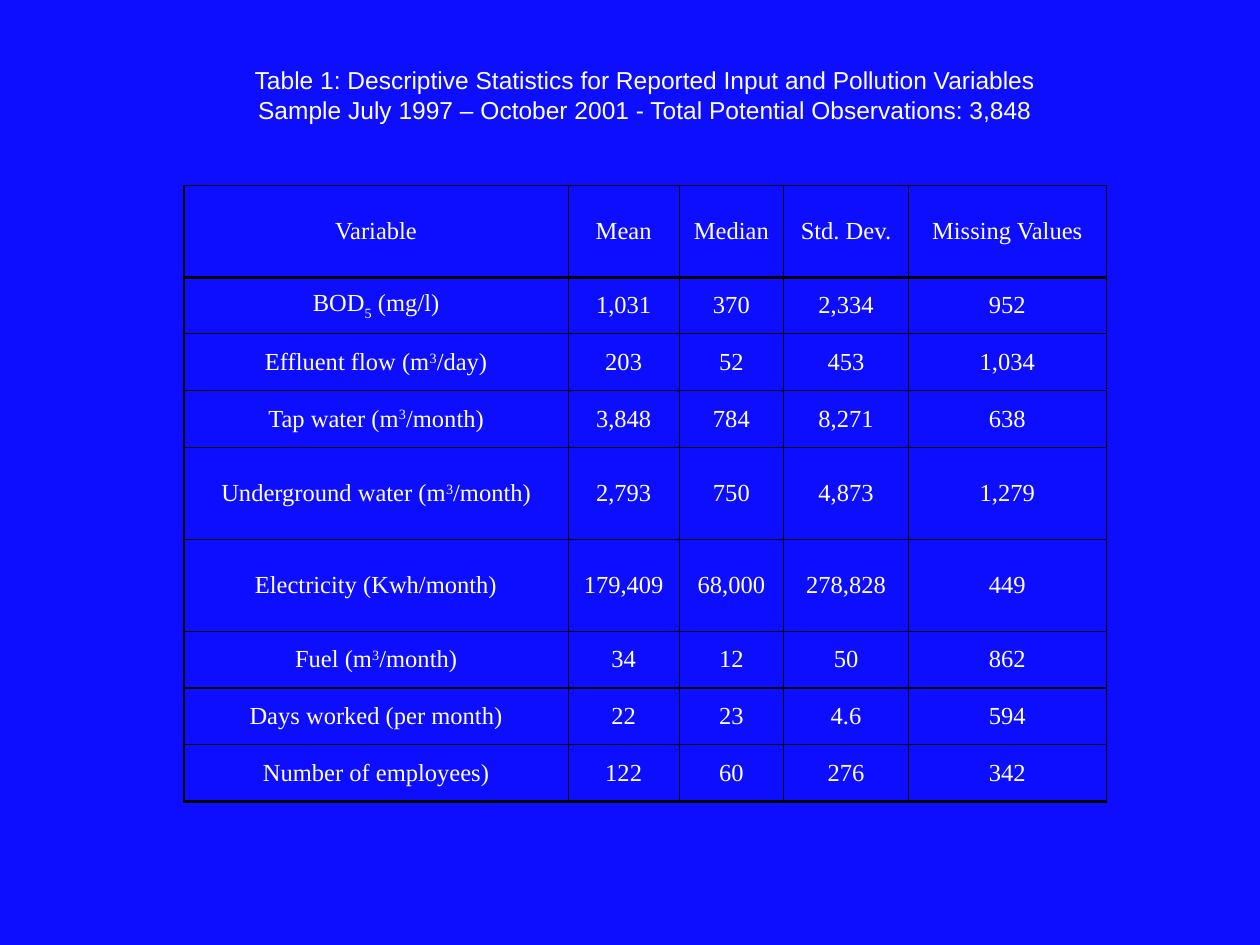
from dataclasses import dataclass

from lxml import etree
from pptx import Presentation
from pptx.dml.color import RGBColor
from pptx.enum.text import MSO_ANCHOR, PP_ALIGN
from pptx.oxml.ns import qn
from pptx.util import Inches, Pt

CENTER = PP_ALIGN.CENTER
TOP, MIDDLE = MSO_ANCHOR.TOP, MSO_ANCHOR.MIDDLE

BLUE = RGBColor(0x0D, 0x0D, 0xFF)
WHITE = RGBColor(0xFF, 0xFF, 0xFF)
BLACK = RGBColor(0x00, 0x00, 0x00)

SLIDE_WIDTH, SLIDE_HEIGHT = 10, 7.5
TEXT_SIZE = 14
THIN, THICK = 0.75, 2
SUPERSCRIPT, SUBSCRIPT = 30, -30

TABLE_LEFT, TABLE_TOP = 1.46, 1.47
COLUMN_WIDTHS = (3.05, 0.88, 0.83, 0.99, 1.57)
ROW_HEIGHT, TALL_ROW_HEIGHT = 0.45, 0.73
TALL_ROWS = (0, 4, 5)

TITLE_LINES = (
    "Table 1: Descriptive Statistics for Reported Input and Pollution Variables",
    "Sample July 1997 – October 2001 - Total Potential Observations: 3,848",
)


@dataclass(frozen=True)
class Label:
    """Text with an optional raised or lowered mark inside it."""
    before: str
    mark: str = ""
    after: str = ""
    baseline: int = SUPERSCRIPT


@dataclass(frozen=True)
class Row:
    label: Label
    values: tuple[str, ...]


def cubic(quantity: str, period: str) -> Label:
    return Label(f"{quantity} (m", "3", f"/{period})")


ROWS = (
    Row(Label("Variable"), ("Mean", "Median", "Std. Dev.", "Missing Values")),
    Row(Label("BOD", "5", " (mg/l)", SUBSCRIPT), ("1,031", "370", "2,334", "952")),
    Row(cubic("Effluent flow", "day"), ("203", "52", "453", "1,034")),
    Row(cubic("Tap water", "month"), ("3,848", "784", "8,271", "638")),
    Row(cubic("Underground water", "month"), ("2,793", "750", "4,873", "1,279")),
    Row(Label("Electricity (Kwh/month)"), ("179,409", "68,000", "278,828", "449")),
    Row(cubic("Fuel", "month"), ("34", "12", "50", "862")),
    Row(Label("Days worked (per month)"), ("22", "23", "4.6", "594")),
    Row(Label("Number of employees)"), ("122", "60", "276", "342")),
)


def write_label(paragraph, label: Label, font_name: str) -> None:
    paragraph.alignment = CENTER
    paragraph.font.name = font_name
    paragraph.font.size = Pt(TEXT_SIZE)
    paragraph.font.color.rgb = WHITE
    paragraph.add_run().text = label.before
    if label.mark:
        mark = paragraph.add_run()
        mark.text = label.mark
        mark.font._element.set("baseline", str(label.baseline * 1000))
        paragraph.add_run().text = label.after


def set_borders(cell, top: float, bottom: float) -> None:
    """Rule all four sides; the side rules are thin."""
    properties = cell._tc.get_or_add_tcPr()
    widths = {"a:lnL": THIN, "a:lnR": THIN, "a:lnT": top, "a:lnB": bottom}
    for position, (side, width) in enumerate(widths.items()):
        line = etree.Element(qn(side), w=str(Pt(width)))
        fill = etree.SubElement(line, qn("a:solidFill"))
        etree.SubElement(fill, qn("a:srgbClr"), val=str(BLACK))
        properties.insert(position, line)


def add_title(slide) -> None:
    frame = slide.shapes.add_textbox(
        Inches(1.85), Inches(0.47), Inches(6.54), Inches(0.81)
    ).text_frame
    frame.word_wrap = True
    frame.vertical_anchor = TOP
    for index, line in enumerate(TITLE_LINES):
        paragraph = frame.add_paragraph() if index else frame.paragraphs[0]
        write_label(paragraph, Label(line), "Arial")


def add_statistics_table(slide) -> None:
    heights = [
        TALL_ROW_HEIGHT if index in TALL_ROWS else ROW_HEIGHT
        for index in range(len(ROWS))
    ]
    table = slide.shapes.add_table(
        len(ROWS), len(COLUMN_WIDTHS),
        Inches(TABLE_LEFT), Inches(TABLE_TOP),
        Inches(sum(COLUMN_WIDTHS)), Inches(sum(heights)),
    ).table
    table.first_row = table.horz_banding = False
    table_properties = table._tbl.tblPr
    table_properties.remove(table_properties.find(qn("a:tableStyleId")))

    for column, width in zip(table.columns, COLUMN_WIDTHS):
        column.width = Inches(width)
    for index, (row, height) in enumerate(zip(ROWS, heights)):
        table.rows[index].height = Inches(height)
        top = THICK if index == 1 else THIN
        bottom = THICK if index in (0, len(ROWS) - 1) else THIN
        labels = (row.label, *map(Label, row.values))
        for cell, label in zip(table.rows[index].cells, labels):
            cell.fill.background()
            cell.vertical_anchor = MIDDLE
            set_borders(cell, top, bottom)
            write_label(cell.text_frame.paragraphs[0], label, "Times New Roman")


def main() -> None:
    presentation = Presentation()
    presentation.slide_width = Inches(SLIDE_WIDTH)
    presentation.slide_height = Inches(SLIDE_HEIGHT)
    slide = presentation.slides.add_slide(presentation.slide_layouts[6])
    slide.background.fill.solid()
    slide.background.fill.fore_color.rgb = BLUE
    add_title(slide)
    add_statistics_table(slide)
    presentation.save("out.pptx")


if __name__ == "__main__":
    main()
